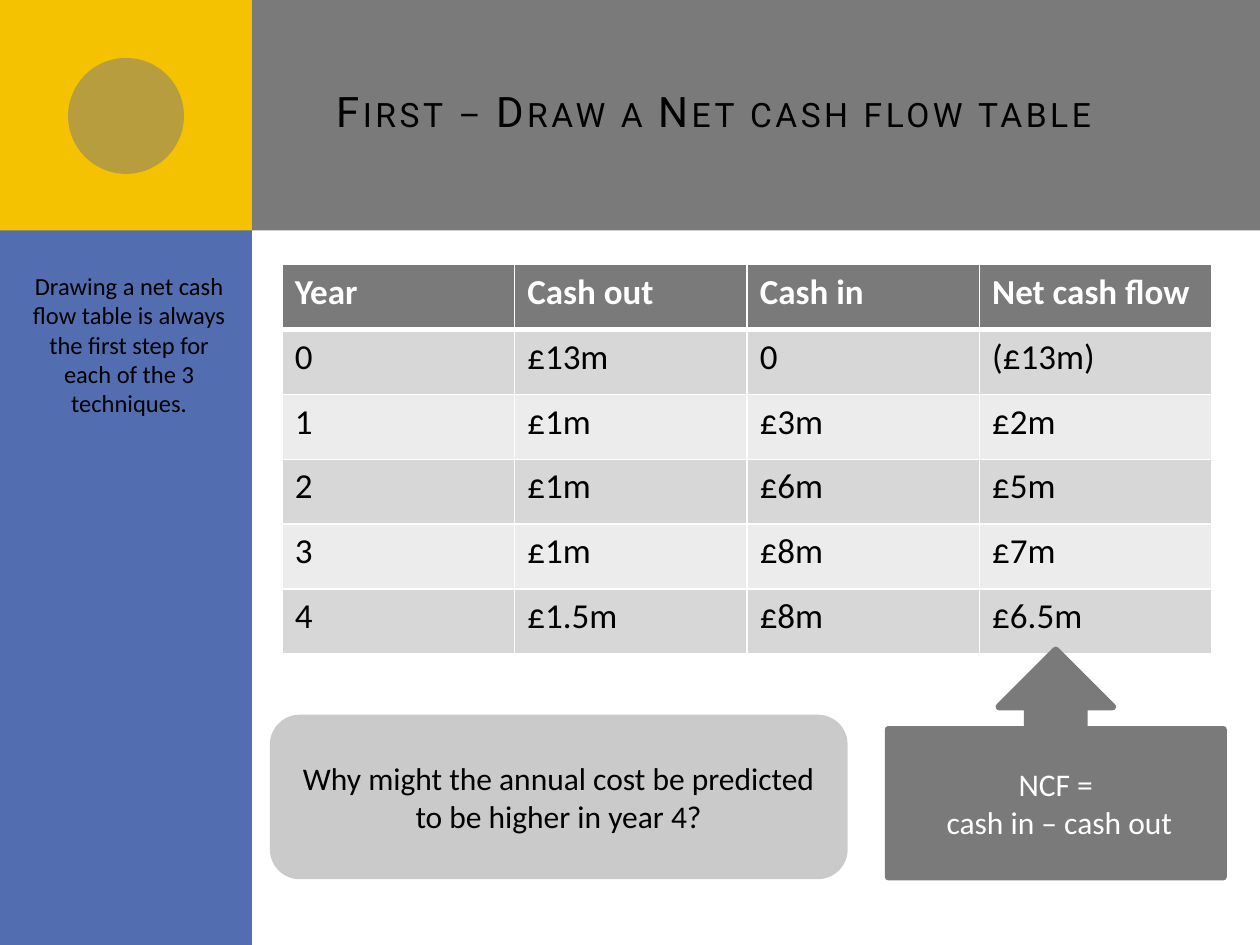
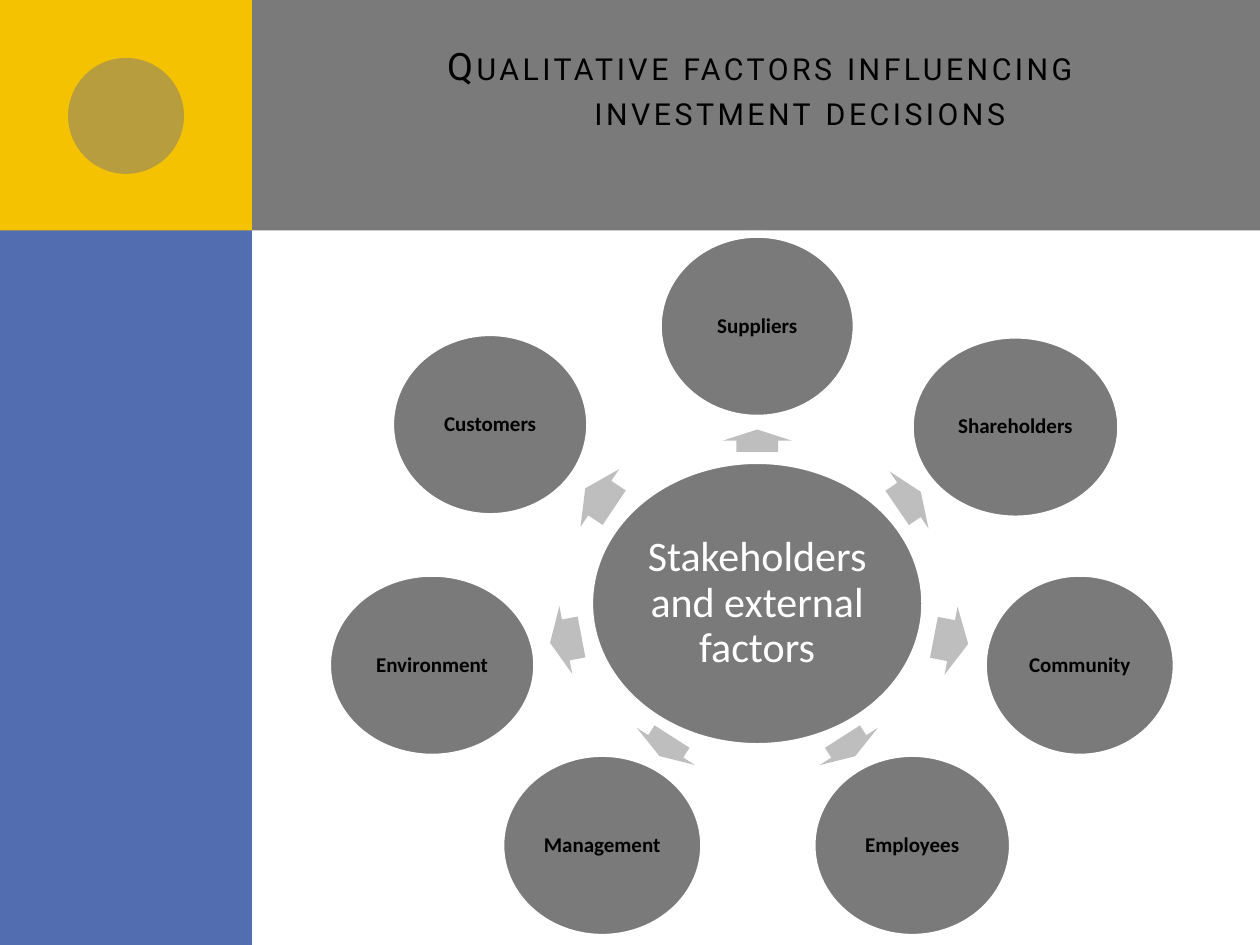
from collections import namedtuple
from math import atan2, cos, degrees, hypot, sin

from lxml.etree import SubElement
from pptx import Presentation
from pptx.dml.color import RGBColor
from pptx.enum.shapes import MSO_SHAPE
from pptx.enum.text import MSO_ANCHOR, PP_ALIGN
from pptx.oxml.ns import qn
from pptx.util import Inches, Pt

GREY = RGBColor(0x7A, 0x7A, 0x7A)
BLUE = RGBColor(0x52, 0x6D, 0xB0)
YELLOW = RGBColor(0xF5, 0xC2, 0x01)
LIGHT_GREY = RGBColor(0xCA, 0xCA, 0xCA)
ARROW_GREY = RGBColor(0xBE, 0xBE, 0xBE)
ROW_DARK = RGBColor(0xD7, 0xD7, 0xD7)
ROW_LIGHT = RGBColor(0xEC, 0xEC, 0xEC)
WHITE = RGBColor(0xFF, 0xFF, 0xFF)
BLACK = RGBColor(0x00, 0x00, 0x00)

BODY_FONT = "Calibri"
TITLE_FONT = "Roboto"

Box = namedtuple("Box", "left top width height")

CASH_FLOWS = [
    ["Year", "Cash out", "Cash in", "Net cash flow"],
    ["0", "£13m", "0", "(£13m)"],
    ["1", "£1m", "£3m", "£2m"],
    ["2", "£1m", "£6m", "£5m"],
    ["3", "£1m", "£8m", "£7m"],
    ["4", "£1.5m", "£8m", "£6.5m"],
]

STAKEHOLDERS = [
    ("Suppliers", 0, -2.2, 1.57),
    ("Shareholders", 2.05, -1.4, 1.67),
    ("Community", 2.56, 0.49, 1.53),
    ("Employees", 1.23, 1.92, 1.59),
    ("Management", -1.23, 1.92, 1.61),
    ("Environment", -2.58, 0.49, 1.66),
    ("Customers", -2.12, -1.42, 1.58),
]


def place(box):
    return [Inches(length) for length in box]


def add_panel(page, kind, box, fill, line=None):
    shape = page.shapes.add_shape(kind, *place(box))
    shape.shadow.inherit = False
    shape.fill.solid()
    shape.fill.fore_color.rgb = fill
    if line is None:
        shape.line.fill.background()
    else:
        shape.line.color.rgb = line
        shape.line.width = Pt(4)
        SubElement(shape._element.spPr.find(qn("a:ln")), qn("a:round"))
    return shape


def add_span(para, text, size, color, font=BODY_FONT, bold=False):
    span = para.add_run()
    span.text = text
    span.font.size = Pt(size)
    span.font.name = font
    span.font.bold = bold
    span.font.color.rgb = color
    return span


def write(shape, lines, size, color, align=PP_ALIGN.CENTER,
          anchor=MSO_ANCHOR.MIDDLE, spacing=None, inset=None, **style):
    frame = shape.text_frame
    frame.word_wrap = True
    frame.vertical_anchor = anchor
    if inset is not None:
        frame.margin_left = frame.margin_right = Inches(inset)
        frame.margin_top = frame.margin_bottom = Inches(inset)
    for index, text in enumerate(lines):
        para = frame.add_paragraph() if index else frame.paragraphs[0]
        para.alignment = align
        para.line_spacing = spacing
        span = add_span(para, text, size, color, **style)
    return frame, span


def add_frame(page):
    add_panel(page, MSO_SHAPE.RECTANGLE, Box(0.5, 0, 9.5, 1.83), GREY)
    add_panel(page, MSO_SHAPE.RECTANGLE, Box(0, 0, 2, 7.5), BLUE)
    add_panel(page, MSO_SHAPE.RECTANGLE, Box(0, 0, 2, 1.83), YELLOW)
    disc = add_panel(page, MSO_SHAPE.OVAL, Box(0.54, 0.46, 0.92, 0.92), GREY)
    color = disc._element.spPr.find(qn("a:solidFill"))[0]
    SubElement(color, qn("a:alpha"), val="50000")


def add_title(page, box, text, size, align, right_inset):
    title = page.shapes.add_textbox(*place(box))
    frame, span = write(title, [text], size, BLACK, align, font=TITLE_FONT)
    frame.margin_right = Inches(right_inset)
    properties = span.font._element
    properties.set("cap", "small")
    properties.set("spc", "200")
    return frame


def hang_lines(para, left, first):
    properties = para._p.get_or_add_pPr()
    properties.set("marL", str(Inches(left)))
    properties.set("indent", str(Inches(first - left)))


def add_border(cell, side, width):
    line = SubElement(cell._tc.get_or_add_tcPr(), qn(f"a:{side}"), w=str(Pt(width)))
    SubElement(SubElement(line, qn("a:solidFill")), qn("a:srgbClr"), val=str(WHITE))


def add_cash_flow_table(page, box):
    rows, columns = len(CASH_FLOWS), len(CASH_FLOWS[0])
    table = page.shapes.add_table(rows, columns, *place(box)).table
    for column in table.columns:
        column.width = Inches(box.width / columns)
    for row in table.rows:
        row.height = Inches(box.height / rows)
    for row, values in enumerate(CASH_FLOWS):
        header = row == 0
        fill = GREY if header else ROW_DARK if row % 2 else ROW_LIGHT
        for column, value in enumerate(values):
            cell = table.cell(row, column)
            add_border(cell, "lnL", 1)
            add_border(cell, "lnR", 1)
            add_border(cell, "lnT", 3 if row == 1 else 1)
            add_border(cell, "lnB", 3 if header else 1)
            cell.fill.solid()
            cell.fill.fore_color.rgb = fill
            add_span(cell.text_frame.paragraphs[0], value, 20,
                     WHITE if header else BLACK, bold=header)


def add_callout(page, kind, box, fill, lines, color):
    write(add_panel(page, kind, box, fill, fill), lines, 18, color)


def add_sidebar_note(page, box, text):
    note = page.shapes.add_textbox(*place(box))
    write(note, [text], 14, BLACK, anchor=MSO_ANCHOR.TOP)


def add_bubble(page, center_x, center_y, width, height, text, size, color, bold):
    box = Box(center_x - width / 2, center_y - height / 2, width, height)
    bubble = add_panel(page, MSO_SHAPE.OVAL, box, GREY, WHITE)
    write(bubble, [text], size, color, spacing=0.9, inset=0.02, bold=bold)


def oval_radius(width, height, angle):
    return 1 / hypot(2 * cos(angle) / width, 2 * sin(angle) / height)


def add_stakeholder_wheel(page, box):
    hub_width, hub_height, bubble_height, arrow_width = 2.66, 2.27, 1.46, 0.55
    hub_x, hub_y = box.left + 3.41, box.top + 2.93
    add_bubble(page, hub_x, hub_y, hub_width, hub_height,
               "Stakeholders and external factors", 24, WHITE, False)
    for name, across, down, width in STAKEHOLDERS:
        angle = atan2(down, across)
        hub_edge = oval_radius(hub_width, hub_height, angle)
        gap = hypot(across, down) - hub_edge - oval_radius(width, bubble_height, angle)
        length = 0.53 * gap
        reach = hub_edge + 0.47 * gap
        arrow_box = Box(hub_x + reach * cos(angle) - length / 2,
                        hub_y + reach * sin(angle) - arrow_width / 2,
                        length, arrow_width)
        arrow = add_panel(page, MSO_SHAPE.RIGHT_ARROW, arrow_box, ARROW_GREY)
        arrow.adjustments[0] = 0.6
        arrow.adjustments[1] = 0.5
        arrow.rotation = degrees(angle) % 360
        add_bubble(page, hub_x + across, hub_y + down, width, bubble_height,
                   name, 12, BLACK, True)


def build_cash_flow_page(page):
    add_frame(page)
    add_title(page, Box(2.57, 0.25, 6.93, 1.25),
              "First – Draw a Net cash flow table", 24, PP_ALIGN.RIGHT, 0.71)
    add_cash_flow_table(page, Box(2.24, 2.1, 7.38, 3.09))
    add_callout(page, MSO_SHAPE.UP_ARROW_CALLOUT, Box(7.05, 5.16, 2.66, 1.8), GREY,
                ["NCF =", " cash in – cash out"], WHITE)
    add_callout(page, MSO_SHAPE.ROUNDED_RECTANGLE, Box(2.17, 5.7, 4.53, 1.25), LIGHT_GREY,
                ["Why might the annual cost be predicted to be higher in year 4?"], BLACK)
    add_sidebar_note(page, Box(0.12, 2.1, 1.81, 1.28),
                     "Drawing a net cash flow table is always the first step "
                     "for each of the 3 techniques.")


def build_stakeholder_page(page):
    add_frame(page)
    frame = add_title(page, Box(2.4, 0.29, 6.27, 0.81),
                      "Qualitative factors influencing investment decisions",
                      21.6, PP_ALIGN.LEFT, 0)
    hang_lines(frame.paragraphs[0], 2.22, 1.05)
    add_stakeholder_wheel(page, Box(2.6, 1.86, 6.73, 5.58))


def main():
    deck = Presentation()
    deck.slide_width, deck.slide_height = Inches(10), Inches(7.5)
    for build in (build_cash_flow_page, build_stakeholder_page):
        build(deck.slides.add_slide(deck.slide_layouts[6]))
    deck.save("out.pptx")


if __name__ == "__main__":
    main()
